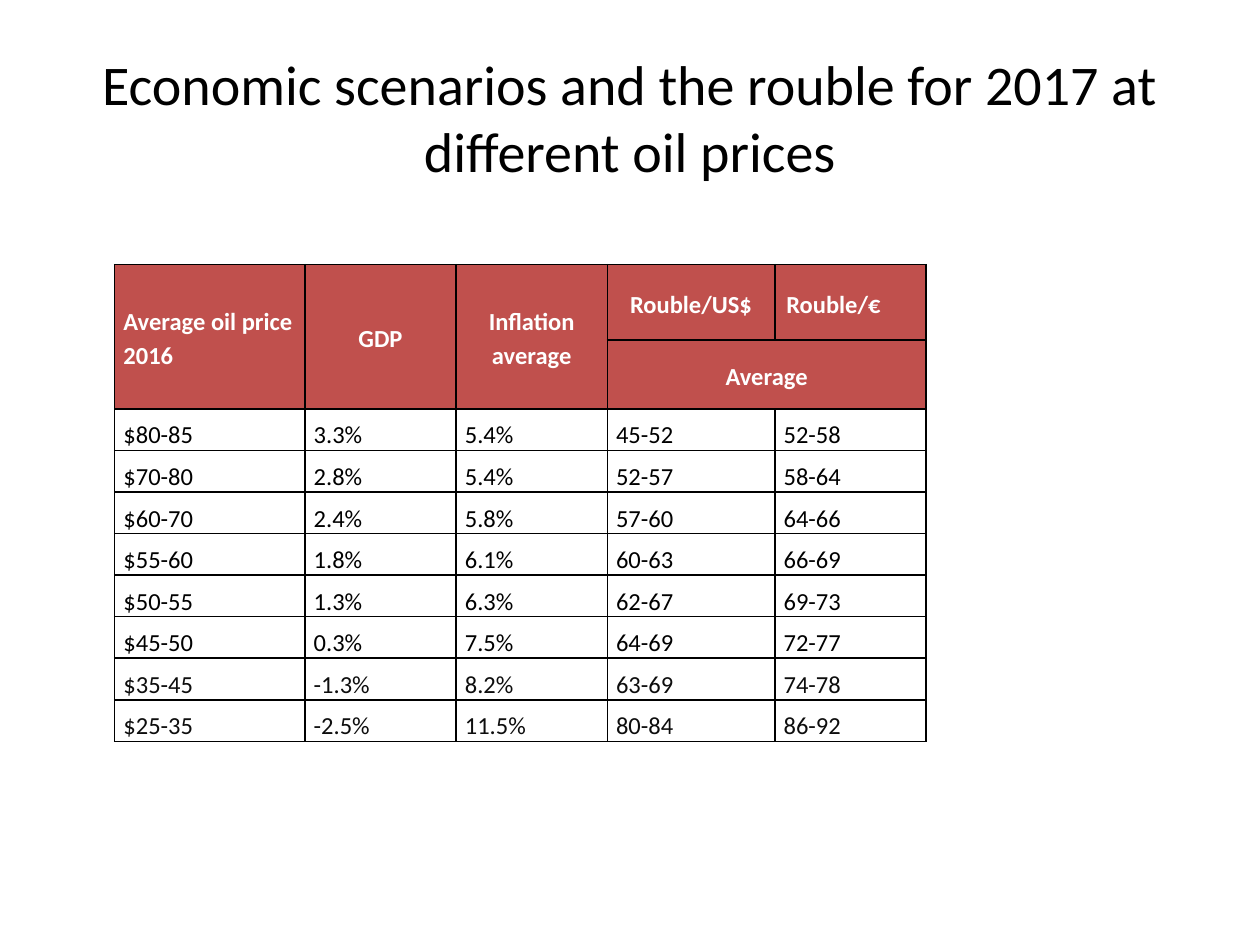
from lxml.etree import SubElement
from pptx import Presentation
from pptx.dml.color import RGBColor
from pptx.enum.text import MSO_ANCHOR, PP_ALIGN
from pptx.oxml.ns import qn
from pptx.util import Inches, Pt

BLACK = RGBColor(0x00, 0x00, 0x00)
NEAR_BLACK = RGBColor(0x0D, 0x0D, 0x0D)
WHITE = RGBColor(0xFF, 0xFF, 0xFF)
RED = RGBColor(0xC0, 0x50, 0x4D)
FONT = "Calibri"

COLUMN_WIDTHS = [1.51, 1.2, 1.2, 1.33, 1.2]
HEADER_HEIGHTS = [0.6, 0.54]
BODY_HEIGHT = 0.33
HEADERS = ["Average oil price 2016", "GDP", "Inflation average", "Rouble/US$", "Rouble/€"]
SCENARIOS = [
    ["$80-85", "3.3%", "5.4%", "45-52", "52-58"],
    ["$70-80", "2.8%", "5.4%", "52-57", "58-64"],
    ["$60-70", "2.4%", "5.8%", "57-60", "64-66"],
    ["$55-60", "1.8%", "6.1%", "60-63", "66-69"],
    ["$50-55", "1.3%", "6.3%", "62-67", "69-73"],
    ["$45-50", "0.3%", "7.5%", "64-69", "72-77"],
    ["$35-45", "-1.3%", "8.2%", "63-69", "74-78"],
    ["$25-35", "-2.5%", "11.5%", "80-84", "86-92"],
]
NEAR_BLACK_ROWS = SCENARIOS[-2:]


def write_text(frame, text, size=14, color=BLACK, bold=False,
               align=PP_ALIGN.JUSTIFY, spacing=1.15):
    paragraph = frame.paragraphs[0]
    paragraph.alignment = align
    paragraph.line_spacing = spacing
    span = paragraph.add_run()
    span.text = text
    span.font.name = FONT
    span.font.size = Pt(size)
    span.font.bold = bold
    span.font.color.rgb = color


def add_borders(cell):
    """Put a thin black line on all four sides; call before setting the fill."""
    properties = cell._tc.get_or_add_tcPr()
    for side in ("a:lnL", "a:lnR", "a:lnT", "a:lnB"):
        line = SubElement(properties, qn(side), w=str(Pt(1)))
        fill = SubElement(line, qn("a:solidFill"))
        SubElement(fill, qn("a:srgbClr"), val=str(BLACK))


def format_cell(cell, anchor, fill=None):
    cell.margin_left = cell.margin_right = Inches(0.07)
    cell.margin_top = cell.margin_bottom = 0
    cell.vertical_anchor = anchor
    add_borders(cell)
    if fill is None:
        cell.fill.background()
    else:
        cell.fill.solid()
        cell.fill.fore_color.rgb = fill


def write_header(cell, text, align=PP_ALIGN.CENTER):
    write_text(cell.text_frame, text, color=WHITE, bold=True, align=align)


def fill_header(table):
    for row in range(len(HEADER_HEIGHTS)):
        for column in range(len(HEADERS)):
            format_cell(table.cell(row, column), MSO_ANCHOR.MIDDLE, RED)
    for column in range(3):
        table.cell(0, column).merge(table.cell(1, column))
    table.cell(1, 3).merge(table.cell(1, 4))
    for column, text in enumerate(HEADERS):
        align = PP_ALIGN.CENTER if column else PP_ALIGN.LEFT
        write_header(table.cell(0, column), text, align)
    # The euro heading sits left of its column's centre.
    table.cell(0, 4).margin_right = Inches(0.34)
    write_header(table.cell(1, 3), "Average")


def fill_body(table):
    for row, scenario in enumerate(SCENARIOS, start=len(HEADER_HEIGHTS)):
        color = NEAR_BLACK if scenario in NEAR_BLACK_ROWS else BLACK
        for column, text in enumerate(scenario):
            cell = table.cell(row, column)
            format_cell(cell, MSO_ANCHOR.BOTTOM)
            write_text(cell.text_frame, text, color=color)


def add_scenario_table(page):
    heights = HEADER_HEIGHTS + [BODY_HEIGHT] * len(SCENARIOS)
    table = page.shapes.add_table(
        len(heights), len(COLUMN_WIDTHS), Inches(0.91), Inches(2.1),
        Inches(sum(COLUMN_WIDTHS)), Inches(sum(heights))).table
    table.first_row = table.horz_banding = False
    for column, width in zip(table.columns, COLUMN_WIDTHS):
        column.width = Inches(width)
    for row, height in zip(table.rows, heights):
        row.height = Inches(height)
    fill_header(table)
    fill_body(table)


def add_title(page, text):
    title = page.shapes.title
    title.left, title.top = Inches(0.5), Inches(0.3)
    title.width, title.height = Inches(9), Inches(1.25)
    title.text_frame.vertical_anchor = MSO_ANCHOR.MIDDLE
    write_text(title.text_frame, text, size=32, align=PP_ALIGN.CENTER, spacing=1.0)


def main():
    deck = Presentation()
    deck.slide_width, deck.slide_height = Inches(10), Inches(7.5)
    page = deck.slides.add_slide(deck.slide_layouts[5])
    add_title(page, "Economic scenarios and the rouble for 2017 at different oil prices")
    add_scenario_table(page)
    deck.save("out.pptx")


if __name__ == "__main__":
    main()
